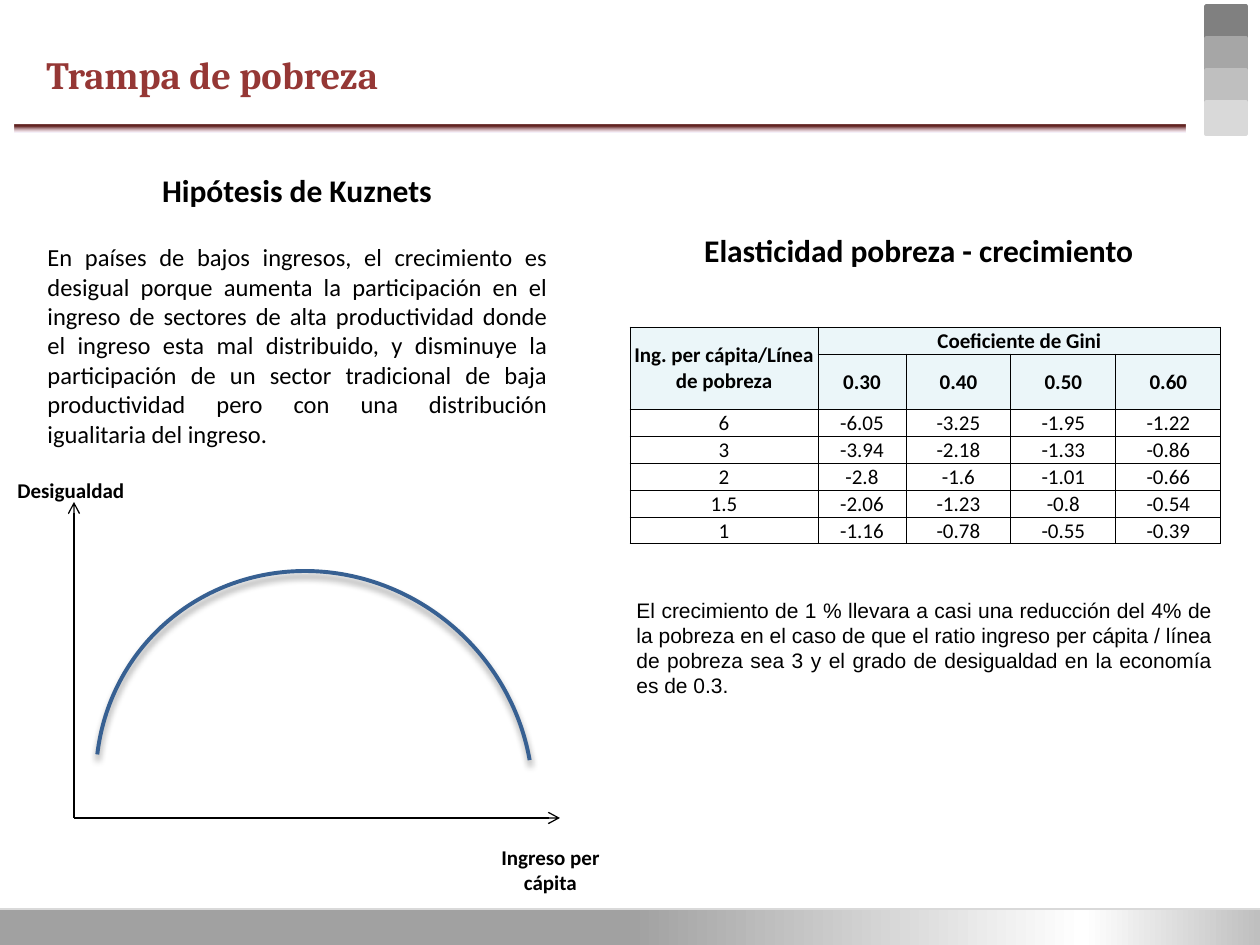
from lxml import etree
from pptx import Presentation
from pptx.dml.color import RGBColor
from pptx.enum.shapes import MSO_CONNECTOR, MSO_SHAPE
from pptx.enum.text import MSO_ANCHOR, PP_ALIGN
from pptx.oxml import parse_xml
from pptx.oxml.ns import nsdecls, qn
from pptx.util import Pt

PX = 914400 / 126
LEFT, MID, JUST = PP_ALIGN.LEFT, PP_ALIGN.CENTER, PP_ALIGN.JUSTIFY
CENTER, BOTTOM = MSO_ANCHOR.MIDDLE, MSO_ANCHOR.BOTTOM
RECT, ARC = MSO_SHAPE.RECTANGLE, MSO_SHAPE.ARC
STRAIGHT = MSO_CONNECTOR.STRAIGHT

BLACK = RGBColor(0, 0, 0)
WINE = RGBColor(0x95, 0x37, 0x35)
BLUE = RGBColor(0x37, 0x60, 0x92)
ICE = RGBColor(0xEB, 0xF6, 0xF9)
PALE = RGBColor(0xD9, 0xD9, 0xD9)
GREYS = [RGBColor(g, g, g) for g in (0x80, 0xA6, 0xBF)] + [PALE]

PLAIN = {"name": "Calibri", "size": Pt(12), "bold": False}
BOLD = PLAIN | {"bold": True}
HEAD = BOLD | {"size": Pt(18)}
BODY = PLAIN | {"size": Pt(14)}
NOTE = PLAIN | {"name": "Arial"}
TITLE = {"name": "Cambria", "size": Pt(22), "bold": True}

GINI = ["0.30", "0.40", "0.50", "0.60"]
ROWS = [
    ["6", "-6.05", "-3.25", "-1.95", "-1.22"],
    ["3", "-3.94", "-2.18", "-1.33", "-0.86"],
    ["2", "-2.8", "-1.6", "-1.01", "-0.66"],
    ["1.5", "-2.06", "-1.23", "-0.8", "-0.54"],
    ["1", "-1.16", "-0.78", "-0.55", "-0.39"],
]
KUZNETS = (
    "En países de bajos ingresos, el crecimiento es desigual porque aumenta "
    "la participación en el ingreso de sectores de alta productividad donde "
    "el ingreso esta mal distribuido, y disminuye la participación de un "
    "sector tradicional de baja productividad pero con una distribución "
    "igualitaria del ingreso."
)
GROWTH = (
    "El crecimiento de 1 % llevara a casi una reducción del 4% de la pobreza "
    "en el caso de que el ratio ingreso per cápita / línea de pobreza sea 3 y "
    "el grado de desigualdad en la economía es de 0.3."
)


def emu(*vals):
    return [round(v * PX) for v in vals]


def write(frame, text, look, align, color=BLACK):
    para = frame.paragraphs[0]
    para.alignment = align
    run = para.add_run()
    run.text = text
    for key, val in look.items():
        setattr(run.font, key, val)
    run.font.color.rgb = color


def add_text(slide, box, text, look, align=MID, color=BLACK):
    frame = slide.shapes.add_textbox(*emu(*box)).text_frame
    frame.word_wrap = True
    write(frame, text, look, align, color)


def add_block(slide, box, color):
    block = slide.shapes.add_shape(RECT, *emu(*box))
    block.shadow.inherit = False
    block.fill.solid()
    block.fill.fore_color.rgb = color
    block.line.color.rgb = color
    block.line.width = Pt(2)


def add_fade(slide, box, stops, angle):
    """Add a bar with a gradient of (percent, hex colour, opacity) stops."""
    bar = slide.shapes.add_shape(RECT, *emu(*box))
    bar.shadow.inherit = False
    bar.line.fill.background()
    marks = "".join(
        f'<a:gs pos="{pos * 1000}"><a:srgbClr val="{color}">'
        f'<a:alpha val="{alpha * 1000}"/></a:srgbClr></a:gs>'
        for pos, color, alpha in stops
    )
    fade = parse_xml(
        f'<a:gradFill {nsdecls("a")} rotWithShape="1"><a:gsLst>{marks}</a:gsLst>'
        f'<a:lin ang="{angle * 60000}" scaled="0"/></a:gradFill>'
    )
    bar.fill.background()
    none = bar._element.spPr.find(qn("a:noFill"))
    none.getparent().replace(none, fade)


def add_line(slide, ends, color, arrow=False):
    line = slide.shapes.add_connector(STRAIGHT, *emu(*ends))
    line.line.color.rgb = color
    line.line.width = Pt(0.75)
    if arrow:
        etree.SubElement(line.line._get_or_add_ln(), qn("a:tailEnd"), type="arrow")
    etree.SubElement(line._element.spPr, qn("a:effectLst"))


def add_curve(slide, box):
    curve = slide.shapes.add_shape(ARC, *emu(*box))
    curve.rotation = 313.2
    curve.adjustments[0] = 141.51
    curve.adjustments[1] = 23.48
    curve.fill.background()
    curve.line.color.rgb = BLUE
    curve.line.width = Pt(2.25)
    curve.shadow.inherit = False
    curve._element.spPr.find(qn("a:effectLst")).append(parse_xml(
        f'<a:outerShdw {nsdecls("a")} blurRad="{Pt(4)}" dist="{Pt(3)}" '
        'dir="5400000" rotWithShape="0"><a:srgbClr val="000000">'
        '<a:alpha val="40000"/></a:srgbClr></a:outerShdw>'
    ))


def frame_cell(cell):
    props = cell._tc.get_or_add_tcPr()
    for spot, side in enumerate("LRTB"):
        props.insert(spot, parse_xml(
            f'<a:ln{side} {nsdecls("a")} w="{Pt(0.5)}"><a:solidFill>'
            f'<a:srgbClr val="{BLACK}"/></a:solidFill></a:ln{side}>'
        ))


def add_grid(slide, left, top, cols, rows):
    data = [
        ["Ing. per cápita/Línea de pobreza", "Coeficiente de Gini", "", "", ""],
        ["", *GINI],
        *ROWS,
    ]
    box = emu(left, top, sum(cols), sum(rows))
    grid = slide.shapes.add_table(len(rows), len(cols), *box).table
    grid.first_row = grid.horz_banding = False
    for col, width in zip(grid.columns, emu(*cols)):
        col.width = width
    for row, height in zip(grid.rows, emu(*rows)):
        row.height = height
    for r, texts in enumerate(data):
        for c, text in enumerate(texts):
            cell = grid.cell(r, c)
            cell.margin_left = cell.margin_right = cell.margin_top = emu(1)[0]
            cell.margin_bottom = 0
            head = r < 2
            mid = r == 1 or (r, c) == (0, 0)
            cell.vertical_anchor = CENTER if mid else BOTTOM
            if head:
                cell.fill.solid()
                cell.fill.fore_color.rgb = ICE
            else:
                cell.fill.background()
            if text:
                write(cell.text_frame, text, BOLD if head else PLAIN, MID)
            frame_cell(cell)
    grid.cell(0, 0).merge(grid.cell(1, 0))
    grid.cell(0, 1).merge(grid.cell(0, 4))


def add_decor(slide):
    foot = [(50, "A1A1A1", 100), (86, "FFFFFF", 100), (100, "BFBFBF", 100)]
    add_fade(slide, (0, 908, 1260, 37), foot, 0)
    add_line(slide, (0, 909, 1260, 909), PALE)
    for i, grey in enumerate(GREYS):
        add_block(slide, (1206, 6 + 32 * i, 40, 32), grey)
    rule = [(23, "632523", 100), (97, "FFEBFA", 43), (100, "85C2FF", 0)]
    add_fade(slide, (15, 125, 1171, 8), rule, 90)


def main():
    deck = Presentation()
    deck.slide_width, deck.slide_height = emu(1260, 945)
    slide = deck.slides.add_slide(deck.slide_layouts[6])
    add_decor(slide)
    add_text(slide, (34, 45, 922, 79), "Trampa de pobreza", TITLE, LEFT, WINE)

    add_grid(slide, 630, 327, [188, 88] + [105] * 3, [27, 55] + [27] * 5)
    add_text(slide, (35, 236, 525, 404), KUZNETS, BODY, JUST)

    add_curve(slide, (101, 566, 427, 446))
    add_line(slide, (74, 818, 74, 502), BLACK, True)
    add_line(slide, (74, 818, 560, 818), BLACK, True)
    add_text(slide, (5, 471, 139, 38), "Desigualdad", BOLD, LEFT)
    add_text(slide, (481, 838, 139, 63), "Ingreso per cápita", BOLD)

    add_text(slide, (123, 165, 348, 50), "Hipótesis de Kuznets", HEAD)
    add_text(slide, (636, 225, 566, 50), "Elasticidad pobreza - crecimiento", HEAD)
    add_text(slide, (624, 591, 601, 115), GROWTH, NOTE, JUST)
    deck.save("out.pptx")


if __name__ == "__main__":
    main()
